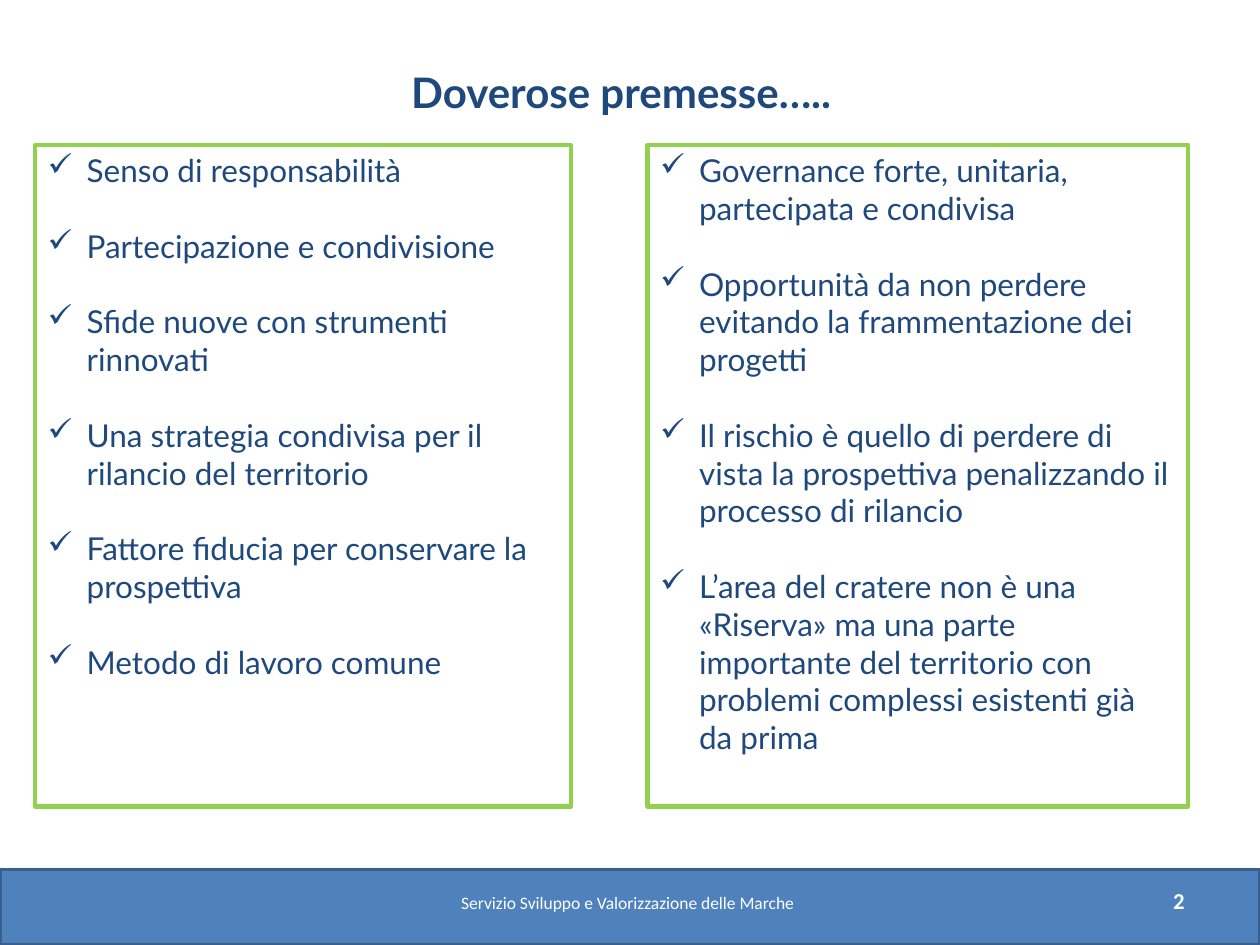
from lxml import etree
from pptx import Presentation
from pptx.dml.color import RGBColor
from pptx.enum import shapes, text
from pptx.oxml import ns
from pptx.util import Inches, Pt

NAVY = RGBColor(0x1F, 0x49, 0x7D)
BLUE = RGBColor(0x4F, 0x81, 0xBD)
DARK_BLUE = RGBColor(0x3A, 0x5F, 0x8C)
GREEN = RGBColor(0x92, 0xD0, 0x50)
WHITE = RGBColor(0xFF, 0xFF, 0xFF)

VALUES = [
    "Senso di responsabilità",
    "Partecipazione e condivisione",
    "Sfide nuove con strumenti rinnovati",
    "Una strategia condivisa per il rilancio del territorio",
    "Fattore fiducia per conservare la prospettiva",
    "Metodo di lavoro comune",
]
CONDITIONS = [
    "Governance forte, unitaria, partecipata e condivisa",
    "Opportunità da non perdere evitando la frammentazione dei progetti",
    "Il rischio è quello di perdere di vista la prospettiva penalizzando il "
    "processo di rilancio",
    "L’area del cratere non è una «Riserva» ma una parte importante del "
    "territorio con problemi complessi esistenti già da prima",
]


def style_font(font, name, size, color, bold=False):
    font.name = name
    font.size = Pt(size)
    font.color.rgb = color
    font.bold = bold


def add_rectangle(page, left, top, width, height, line_color, line_width):
    box = page.shapes.add_shape(
        shapes.MSO_SHAPE.RECTANGLE,
        Inches(left), Inches(top), Inches(width), Inches(height))
    box.shadow.inherit = False
    box.line.color.rgb = line_color
    box.line.width = Pt(line_width)
    return box


def add_label(page, left, top, width, height, wording, align, **style):
    box = page.shapes.add_textbox(
        Inches(left), Inches(top), Inches(width), Inches(height))
    frame = box.text_frame
    frame.word_wrap = True
    frame.vertical_anchor = text.MSO_ANCHOR.MIDDLE
    frame.text = wording
    para = frame.paragraphs[0]
    para.alignment = align
    style_font(para.runs[0].font, **style)


def add_check_mark(para):
    properties = para._p.get_or_add_pPr()
    properties.set("marL", str(Inches(0.31)))
    properties.set("indent", str(-Inches(0.31)))
    bullet = etree.SubElement(properties, ns.qn("a:buChar"))
    bullet.set("char", "✓")


def add_checklist(page, left, width, items):
    box = add_rectangle(page, left, 1.15, width, 5.25, GREEN, 2.5)
    box.fill.background()
    frame = box.text_frame
    frame.word_wrap = True
    frame.vertical_anchor = text.MSO_ANCHOR.TOP
    frame.text = "\n".join(items)
    for index, para in enumerate(frame.paragraphs):
        para.alignment = text.PP_ALIGN.LEFT
        if index:
            para.space_before = Pt(21.6)
        add_check_mark(para)
        style_font(para.runs[0].font, "Lato", 18, NAVY)


def add_footer(page):
    band = add_rectangle(page, 0, 6.9, 10, 0.6, DARK_BLUE, 2)
    band.fill.solid()
    band.fill.fore_color.rgb = BLUE
    add_label(page, 7.99, 6.95, 1.51, 0.4, "2", text.PP_ALIGN.RIGHT,
              name="Calibri", size=13, color=WHITE, bold=True)
    add_label(page, 2.89, 6.96, 4.18, 0.4,
              "Servizio Sviluppo e Valorizzazione delle Marche",
              text.PP_ALIGN.CENTER, name="Calibri", size=10, color=WHITE)


def main():
    deck = Presentation()
    deck.slide_width = Inches(10)
    deck.slide_height = Inches(7.5)
    page = deck.slides.add_slide(deck.slide_layouts[6])
    add_footer(page)
    add_label(page, 0.43, 0.29, 9, 0.87, "Doverose premesse…..",
              text.PP_ALIGN.CENTER, name="Lato", size=24, color=NAVY, bold=True)
    add_checklist(page, 0.28, 4.25, VALUES)
    add_checklist(page, 5.14, 4.29, CONDITIONS)
    deck.save("out.pptx")


if __name__ == "__main__":
    main()
